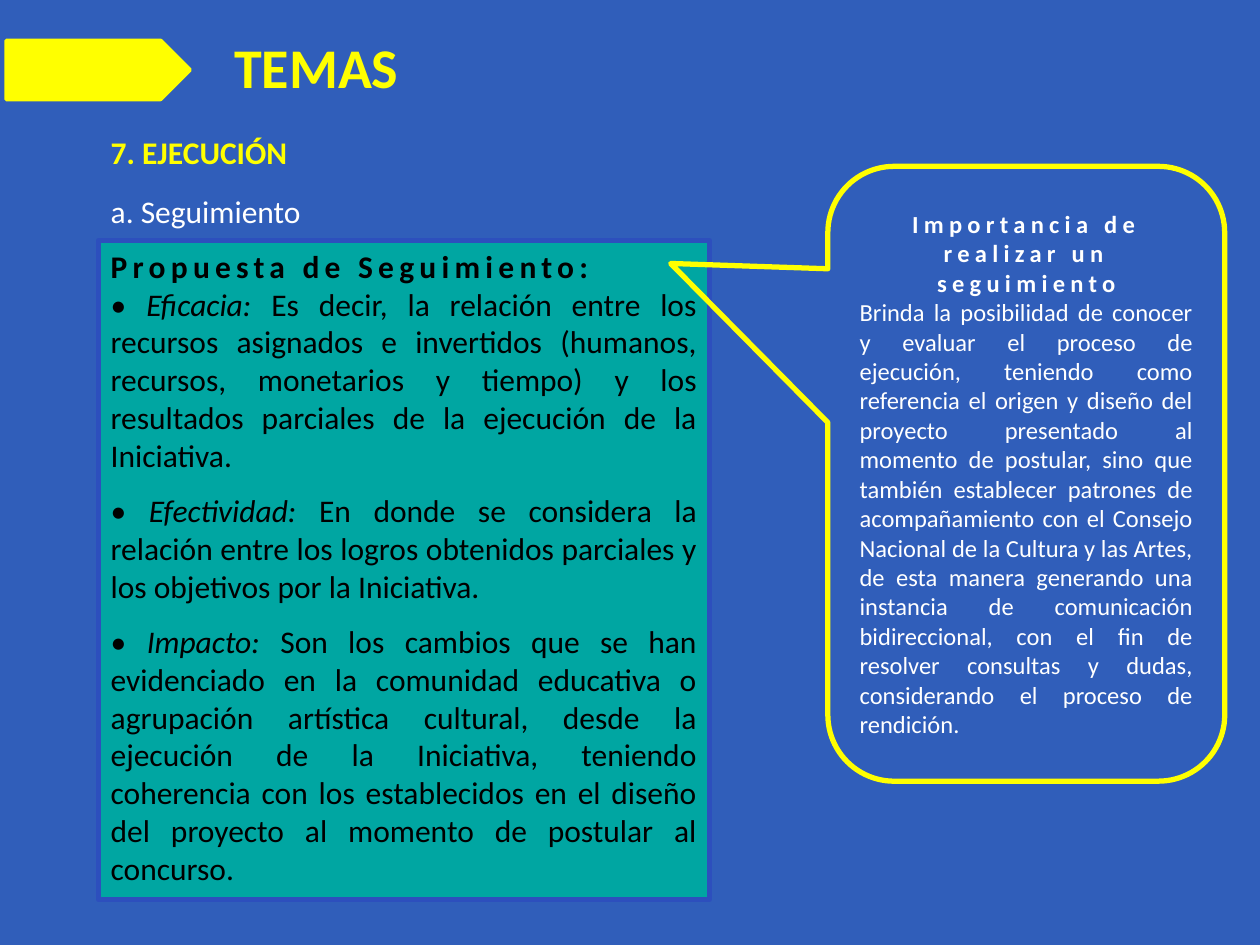
from pptx import Presentation
from pptx.dml.color import RGBColor
from pptx.enum.shapes import MSO_SHAPE as Shape
from pptx.enum.text import MSO_ANCHOR as Anchor, MSO_AUTO_SIZE as AutoSize, PP_ALIGN as Align
from pptx.util import Inches, Pt

BLUE = RGBColor(0x30, 0x5E, 0xBA)
BORDER_BLUE = RGBColor(0x2D, 0x4F, 0xBD)
TEAL = RGBColor(0x00, 0xA6, 0xA2)
YELLOW = RGBColor(0xFF, 0xFF, 0x00)
WHITE = RGBColor(0xFF, 0xFF, 0xFF)
BLACK = RGBColor(0x00, 0x00, 0x00)

CRITERIA = [
    ("Eficacia:", " Es decir, la relación entre los recursos asignados e invertidos "
     "(humanos, recursos, monetarios y tiempo) y los resultados parciales de la "
     "ejecución de la Iniciativa."),
    ("Efectividad: ", "En donde se considera la relación entre los logros obtenidos "
     "parciales y los objetivos por la Iniciativa."),
    ("Impacto: ", "Son los cambios que se han evidenciado en la comunidad educativa o "
     "agrupación artística cultural, desde la ejecución de la Iniciativa, teniendo "
     "coherencia con los establecidos en el diseño del proyecto al momento de "
     "postular al concurso."),
]
IMPORTANCE = (
    "Brinda la posibilidad de conocer y evaluar el proceso de ejecución, teniendo como "
    "referencia el origen y diseño del proyecto presentado al momento de postular, sino "
    "que también establecer patrones de acompañamiento con el Consejo Nacional de la "
    "Cultura y las Artes, de esta manera generando una instancia de comunicación "
    "bidireccional, con el fin de resolver consultas y dudas, considerando el proceso "
    "de rendición."
)


def add_box(slide, kind, box, line_color, line_width, fill=None):
    shape = slide.shapes.add_shape(kind, *map(Inches, box))
    shape.shadow.inherit = False
    if fill is None:
        shape.fill.background()
    else:
        shape.fill.solid()
        shape.fill.fore_color.rgb = fill
    shape.line.color.rgb = line_color
    shape.line.width = Pt(line_width)
    return shape


def add_text_frame(slide, box):
    frame = slide.shapes.add_textbox(*map(Inches, box)).text_frame
    frame.word_wrap = True
    frame.auto_size = AutoSize.SHAPE_TO_FIT_TEXT
    return frame


def add_paragraph(frame, align=Align.LEFT, after=0):
    first = frame.paragraphs[0]
    paragraph = frame.add_paragraph() if first.runs else first
    paragraph.alignment = align
    paragraph.space_after = Pt(after)
    return paragraph


def add_run(paragraph, text, size, color, bold=False, italic=False, spacing=0):
    run = paragraph.add_run()
    run.text = text
    font = run.font
    font.name, font.size, font.bold, font.italic = "Calibri", Pt(size), bold, italic
    font.color.rgb = color
    if spacing:
        run._r.get_or_add_rPr().set("spc", str(spacing * 100))


def add_proposal(slide):
    proposal = add_box(slide, Shape.RECTANGLE, (0.78, 1.91, 4.85, 5.23), BORDER_BLUE, 3, TEAL)
    frame = proposal.text_frame
    frame.word_wrap = True
    frame.auto_size = AutoSize.SHAPE_TO_FIT_TEXT
    frame.vertical_anchor = Anchor.TOP
    add_run(add_paragraph(frame), "Propuesta de Seguimiento:", 18, BLACK, bold=True, spacing=3)
    for name, description in CRITERIA:
        criterion = add_paragraph(frame, Align.JUSTIFY, after=10)
        add_run(criterion, "• ", 18, BLACK)
        add_run(criterion, name, 18, BLACK, italic=True)
        add_run(criterion, description, 18, BLACK)


def add_headings(slide):
    section = add_text_frame(slide, (0.78, 1.01, 8.29, 0.88))
    add_run(add_paragraph(section, after=12), "7. EJECUCIÓN", 18, YELLOW, bold=True)
    add_run(add_paragraph(section), "a. Seguimiento", 18, WHITE)

    add_box(slide, Shape.PENTAGON, (0.05, 0.32, 1.46, 0.47), YELLOW, 2, YELLOW)
    title = add_text_frame(slide, (1.76, 0.21, 4.5, 0.64))
    add_run(add_paragraph(title), "TEMAS", 32, YELLOW, bold=True)


def add_importance(slide):
    callout = add_box(slide, Shape.ROUNDED_RECTANGULAR_CALLOUT, (6.57, 1.32, 3.15, 4.88), YELLOW, 3)
    for index, value in enumerate((-0.896, -0.342, 0.167)):
        callout.adjustments[index] = value
    frame = callout.text_frame
    frame.word_wrap = True
    frame.vertical_anchor = Anchor.MIDDLE
    add_run(add_paragraph(frame, Align.CENTER), "Importancia de realizar un seguimiento",
            14, WHITE, bold=True, spacing=3)
    add_run(add_paragraph(frame, Align.JUSTIFY), IMPORTANCE, 14, WHITE)


def main():
    prs = Presentation()
    prs.slide_width, prs.slide_height = Inches(10), Inches(7.5)
    slide = prs.slides.add_slide(prs.slide_layouts[6])
    slide.background.fill.solid()
    slide.background.fill.fore_color.rgb = BLUE

    # Follow-up proposal, headings, then the callout pointing at the proposal
    add_proposal(slide)
    add_headings(slide)
    add_importance(slide)
    prs.save("out.pptx")


if __name__ == "__main__":
    main()
